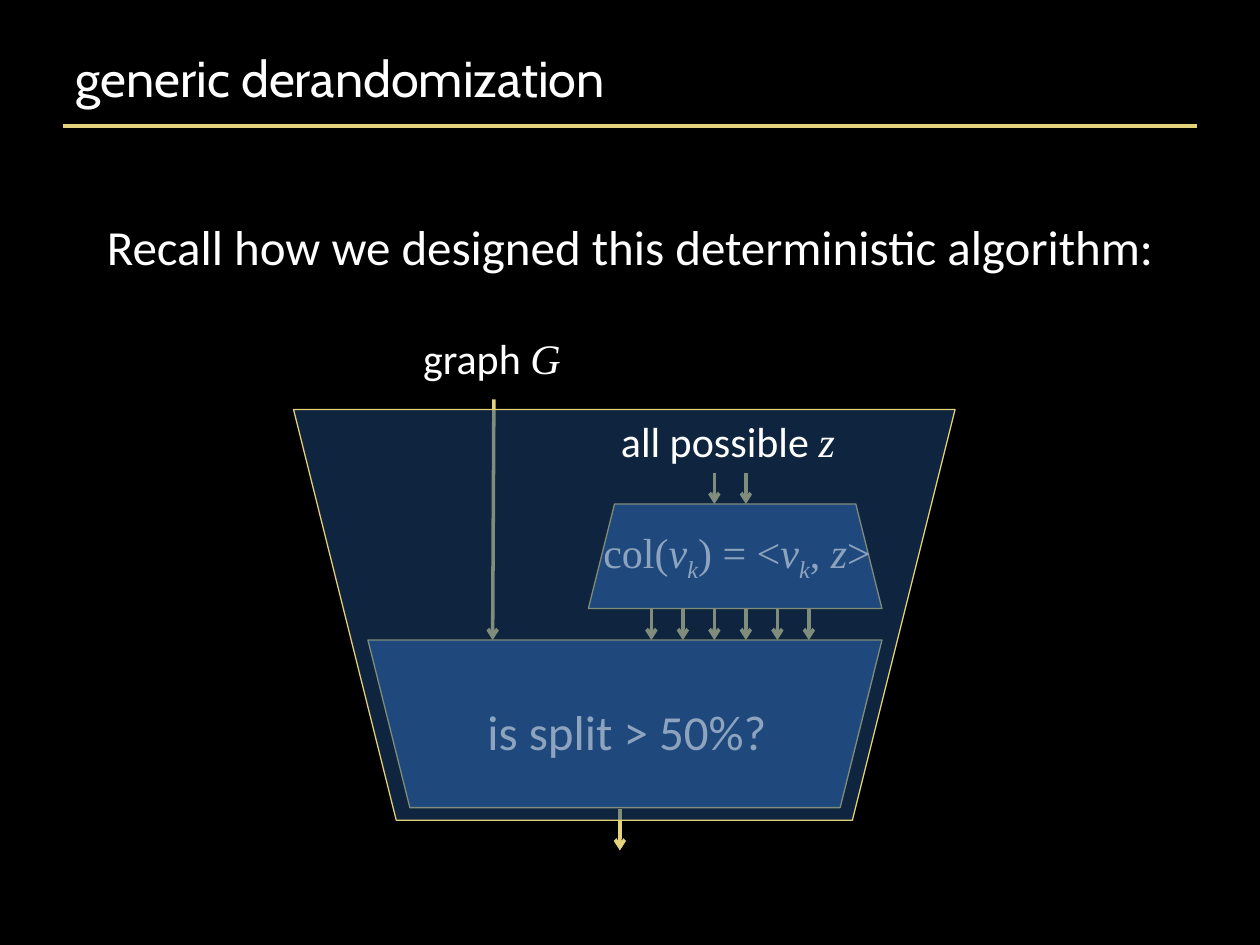
from lxml import etree
from pptx import Presentation
from pptx.dml.color import RGBColor
from pptx.enum import shapes, text
from pptx.oxml.ns import qn
from pptx.util import Inches, Pt

SANS, SERIF = "Calibri", "Times New Roman"


def paint(color, code):
    color.rgb = RGBColor.from_string(code)


def draw_line(x1, y1, x2, y2, head=True):
    line = slide.shapes.add_connector(
        shapes.MSO_CONNECTOR.STRAIGHT,
        Inches(x1), Inches(y1), Inches(x2), Inches(y2))
    line.line.width = Pt(2)
    paint(line.line.color, "E4D37A")
    if head:
        etree.SubElement(line.line._get_or_add_ln(), qn("a:tailEnd"), type="arrow")
    etree.SubElement(line._element.spPr, qn("a:effectLst"))


prs = Presentation()
prs.slide_width, prs.slide_height = Inches(10), Inches(7.5)
slide = prs.slides.add_slide(prs.slide_layouts[6])
slide.background.fill.solid()
paint(slide.background.fill.fore_color, "000000")

# Title rule, output arrow and graph arrow
draw_line(0.5, 1, 9.5, 1, head=False)
draw_line(4.92, 6.42, 4.92, 6.75)
draw_line(3.92, 3.17, 3.91, 5.08)

# Six colour arrows out of the inner box, two bit arrows into it
for i in range(6):
    x = 5.17 + 0.25 * i
    draw_line(x, 4.83, x, 5.08)
for x in (5.67, 5.92):
    draw_line(x, 3.75, x, 4)

# Boxes and labels, back to front; the outer box veils what lies behind it.
# Box: left, top, width, height, rotation, opacity in percent
# Label: left, top, width, height, size, runs of (text, font, style)
parts = [
    ("label", 0.5, 0.3, 9, 0.62, 28.8, [("generic derandomization", "Cabin", "")]),
    ("label", 0.75, 1.67, 8.68, 0.57, 28,
     [("Recall how we designed this deterministic algorithm:", SANS, "")]),
    ("box", 2.92, 5.08, 4.08, 1.33, 180, 100),
    ("label", 3.26, 2.58, 1.4, 0.51, 24, [("graph ", SANS, ""), ("G", SERIF, "i")]),
    ("label", 3.77, 5.52, 2.44, 0.57, 28, [("is split > 50%?", SANS, "")]),
    ("box", 4.67, 4, 2.33, 0.83, 0, 100),
    ("label", 4.69, 4.15, 2.39, 0.51, 24,
     [("col(", SERIF, ""), ("v", SERIF, "i"), ("k", SERIF, "i sub"),
      (") = <", SERIF, ""), ("v", SERIF, "i"), ("k", SERIF, "i sub"),
      (", ", SERIF, ""), ("z", SERIF, "i"), (">", SERIF, "")]),
    ("box", 2.33, 3.25, 5.25, 3.26, 180, 50),
    ("label", 4.83, 3.24, 2.1, 0.51, 24,
     [("all possible ", SANS, ""), ("z", SERIF, "i")]),
]
for kind, x, y, w, h, *rest in parts:
    area = Inches(x), Inches(y), Inches(w), Inches(h)
    if kind == "box":
        turn, alpha = rest
        box = slide.shapes.add_shape(shapes.MSO_SHAPE.TRAPEZOID, *area)
        box.rotation = turn
        box.shadow.inherit = False
        box.fill.solid()
        paint(box.fill.fore_color, "1F497D")
        if alpha < 100:
            color = box._element.spPr.find(qn("a:solidFill"))[0]
            etree.SubElement(color, qn("a:alpha"), val=str(alpha * 1000))
        paint(box.line.color, "E2D075")
        box.line.width = Pt(0.75)
    else:
        size, runs = rest
        frame = slide.shapes.add_textbox(*area).text_frame
        frame.word_wrap = False
        frame.vertical_anchor = text.MSO_ANCHOR.MIDDLE
        para = frame.paragraphs[0]
        para.alignment = text.PP_ALIGN.LEFT
        para.font.size = Pt(size)
        paint(para.font.color, "FFFFFF")
        for words, face, style in runs:
            run = para.add_run()
            run.text = words
            run.font.name = face
            if "i" in style:
                run.font.italic = True
            if "sub" in style:
                run.font._element.set("baseline", "-25000")

prs.save("out.pptx")
